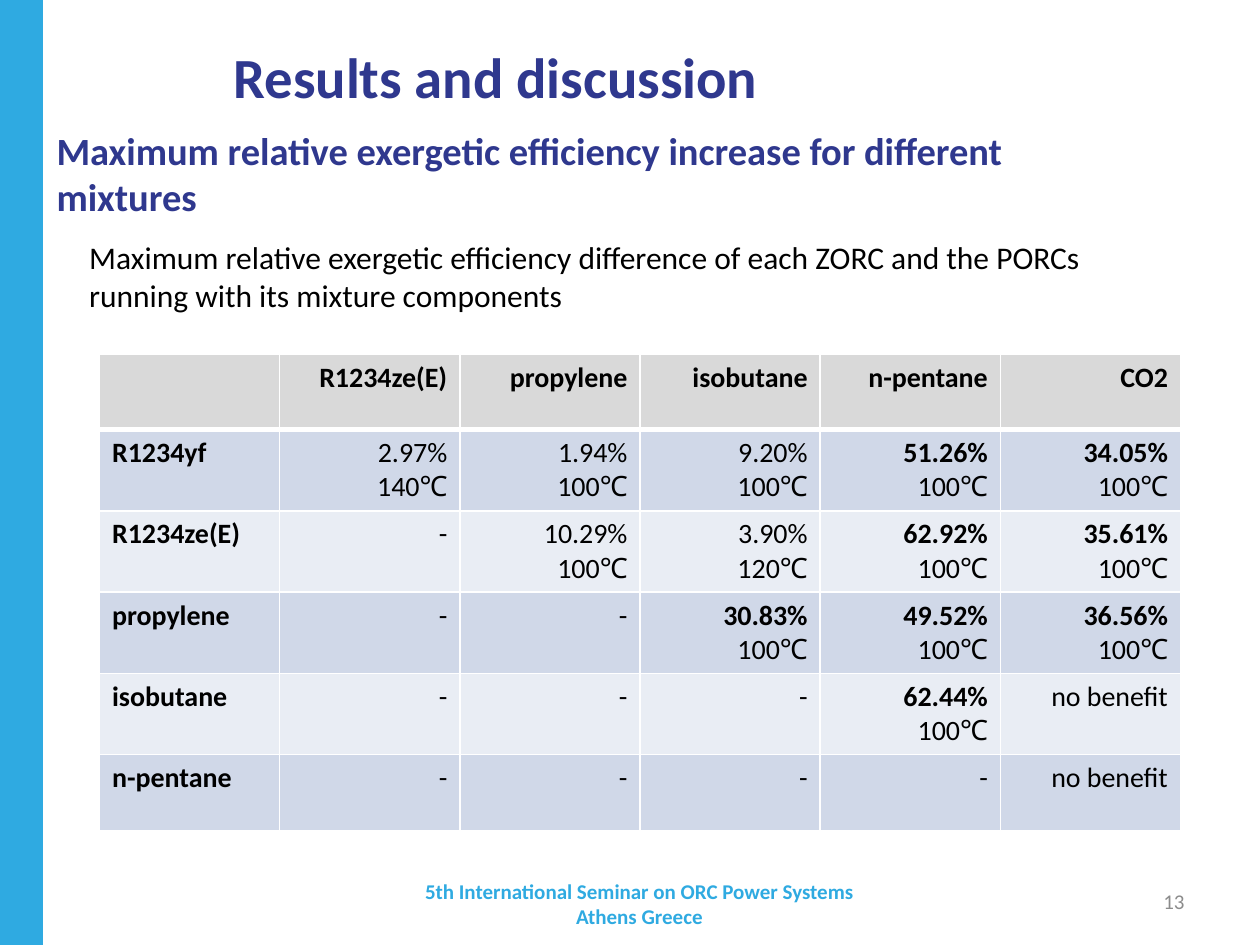
from lxml import etree
from pptx import Presentation
from pptx import util as u
from pptx.dml import color
from pptx.enum import shapes, text
from pptx.oxml import ns

COLUMNS, ROWS = 100, 75
SLIDE_WIDTH, SLIDE_HEIGHT = u.Inches(10), u.Inches(7.5)
SKY, NAVY, GREY, BLACK, WHITE = "2FAAE1", "2F388E", "8C8C8C", "000000", "FFFFFF"
HEADER_FILL, BAND_FILLS = "D9D9D9", ("D0D8E8", "E9EDF4")
BOLD_ABOVE = 30
LEFT, CENTER, RIGHT = (text.PP_ALIGN.LEFT, text.PP_ALIGN.CENTER,
                       text.PP_ALIGN.RIGHT)

TITLE = {"size": u.Pt(32.4), "bold": True}
HEADING = {"size": u.Pt(22), "bold": True}
INTRO = {"size": u.Pt(18), "bold": False}
FOOTER = {"size": u.Pt(12), "bold": True}
NUMBER = {"size": u.Pt(12), "bold": False}
CELL = {"size": u.Pt(16), "bold": False}
CELL_STRONG = {"size": u.Pt(16), "bold": True}

EFFICIENCIES = [
    ["", "R1234ze(E)", "propylene", "isobutane", "n-pentane", "CO2"],
    ["R1234yf", "2.97%\n140℃", "1.94%\n100℃", "9.20%\n100℃",
     "51.26%\n100℃", "34.05%\n100℃"],
    ["R1234ze(E)", "-", "10.29%\n100℃", "3.90%\n120℃",
     "62.92%\n100℃", "35.61%\n100℃"],
    ["propylene", "-", "-", "30.83%\n100℃", "49.52%\n100℃", "36.56%\n100℃"],
    ["isobutane", "-", "-", "-", "62.44%\n100℃", "no benefit"],
    ["n-pentane", "-", "-", "-", "-", "no benefit"],
]
ROW_SPANS = [6, 6.45, 6.45, 6.45, 6.45, 6]


def rgb(value):
    """Turn a hex string into a colour."""
    return color.RGBColor.from_string(value)


def across(columns):
    """Convert grid columns to a length."""
    return round(SLIDE_WIDTH * columns / COLUMNS)


def down(rows):
    """Convert grid rows to a length."""
    return round(SLIDE_HEIGHT * rows / ROWS)


def place(left, top, width, height):
    """Convert a grid area to slide lengths."""
    return across(left), down(top), across(width), down(height)


def write(frame, lines, align):
    """Write (wording, format, colour) lines as paragraphs of a frame."""
    for index, (wording, style, ink) in enumerate(lines):
        paragraph = frame.add_paragraph() if index else frame.paragraphs[0]
        paragraph.alignment = align
        run = paragraph.add_run()
        run.text = wording
        for name, value in {"name": "Calibri", **style}.items():
            setattr(run.font, name, value)
        run.font.color.rgb = rgb(ink)


def add_text(slide, area, wording, style, ink, align=LEFT,
             anchor=text.MSO_ANCHOR.MIDDLE, wrap=True):
    """Add a text box with one paragraph for each line of wording."""
    frame = slide.shapes.add_textbox(*place(*area)).text_frame
    frame.word_wrap, frame.vertical_anchor = wrap, anchor
    write(frame, [(line, style, ink) for line in wording.split("\n")], align)


def add_side_band(slide):
    """Add the coloured band along the left edge."""
    band = slide.shapes.add_shape(shapes.MSO_SHAPE.RECTANGLE,
                                  *place(-0.1, 0, 3.5, ROWS))
    band.shadow.inherit = False
    band.fill.solid()
    band.fill.fore_color.rgb = rgb(SKY)
    band.line.fill.background()


def set_borders(cell, widths):
    """Give the cell white borders of the given widths in points."""
    properties = cell._tc.get_or_add_tcPr()
    for side, width in widths.items():
        border = etree.SubElement(properties, ns.qn(f"a:ln{side}"),
                                  w=str(u.Pt(width)))
        fill = etree.SubElement(border, ns.qn("a:solidFill"))
        etree.SubElement(fill, ns.qn("a:srgbClr"), val=WHITE)


def value_style(line, is_label):
    """Choose bold for labels and for efficiency gains above the limit."""
    strong = line.endswith("%") and float(line[:-1]) > BOLD_ABOVE
    return CELL_STRONG if is_label or strong else CELL


def add_efficiency_table(slide, area):
    """Add the table of efficiency gains for each pair of fluids."""
    table = slide.shapes.add_table(len(EFFICIENCIES), len(EFFICIENCIES[0]),
                                   *place(*area)).table
    for row, span in zip(table.rows, ROW_SPANS):
        row.height = down(span)
    for r, entries in enumerate(EFFICIENCIES):
        for c, entry in enumerate(entries):
            cell = table.cell(r, c)
            set_borders(cell, {"L": 1, "R": 1, "T": 3 if r == 1 else 1,
                               "B": 1 if r else 3})
            cell.fill.solid()
            cell.fill.fore_color.rgb = rgb(
                BAND_FILLS[(r - 1) % 2] if r else HEADER_FILL)
            if entry:
                is_label = r == 0 or c == 0
                write(cell.text_frame,
                      [(line, value_style(line, is_label), BLACK)
                       for line in entry.split("\n")],
                      RIGHT if c else LEFT)


def main():
    """Build and save the results slide."""
    deck = Presentation()
    deck.slide_width, deck.slide_height = SLIDE_WIDTH, SLIDE_HEIGHT
    slide = deck.slides.add_slide(deck.slide_layouts[6])
    add_side_band(slide)
    add_text(slide, (5.1, 3, 68.5, 6.1), "Results and discussion",
             TITLE, NAVY, CENTER)
    add_text(slide, (89.4, 69.5, 5.6, 4), "13", NUMBER, GREY, RIGHT)
    add_text(slide, (28.7, 69.7, 44.1, 4),
             "5th International Seminar on ORC Power Systems\nAthens Greece",
             FOOTER, SKY, CENTER)
    add_efficiency_table(slide, (7.9, 28.1, 85.8, sum(ROW_SPANS)))
    add_text(slide, (3.5, 10.7, 88.2, 6.1),
             "Maximum relative exergetic efficiency increase for different "
             "mixtures", HEADING, NAVY)
    add_text(slide, (6.1, 18.4, 82.3, 7.1),
             "Maximum relative exergetic efficiency difference of each ZORC "
             "and the PORCs\nrunning with its mixture components",
             INTRO, BLACK, anchor=text.MSO_ANCHOR.TOP, wrap=False)
    deck.save("out.pptx")


if __name__ == "__main__":
    main()
